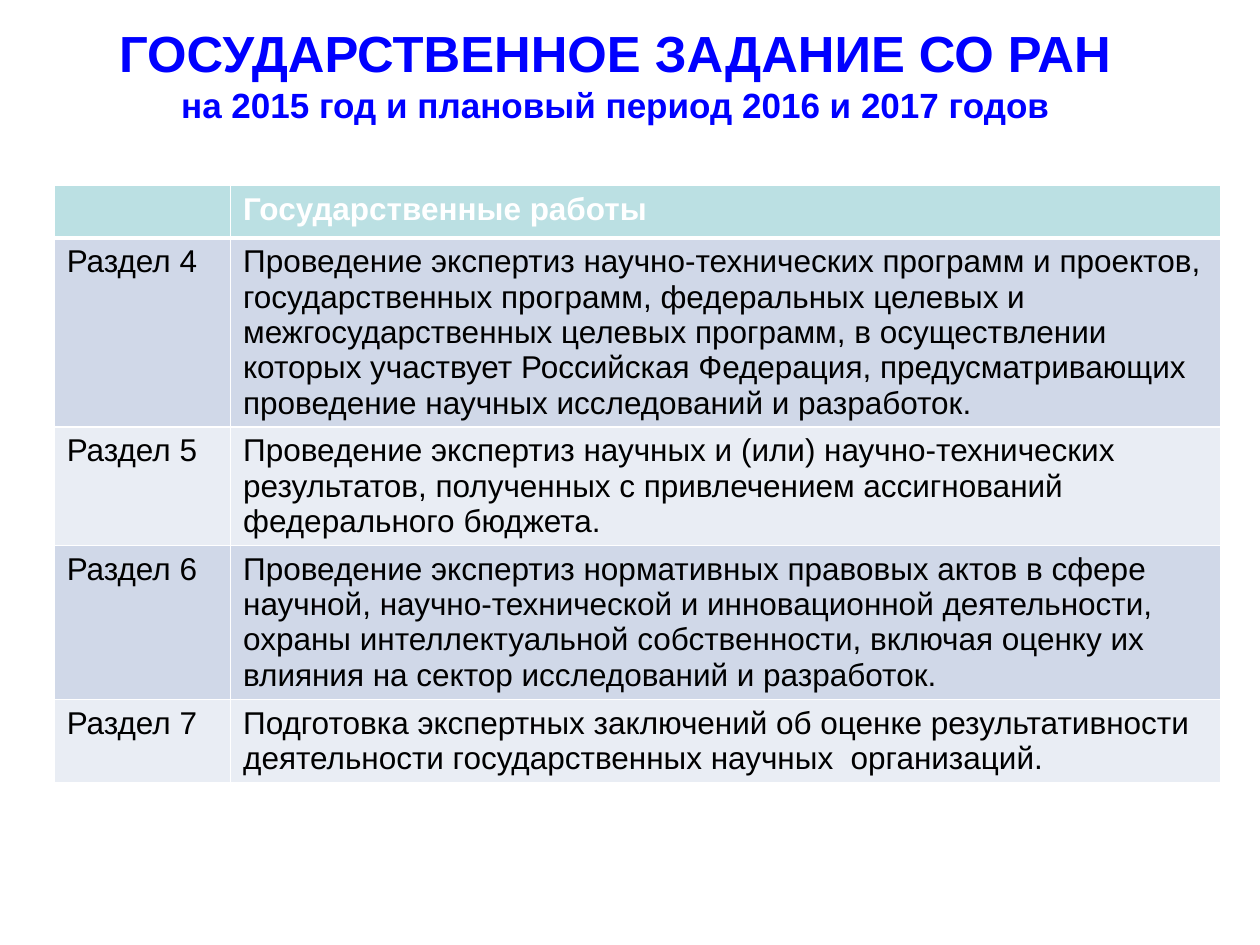
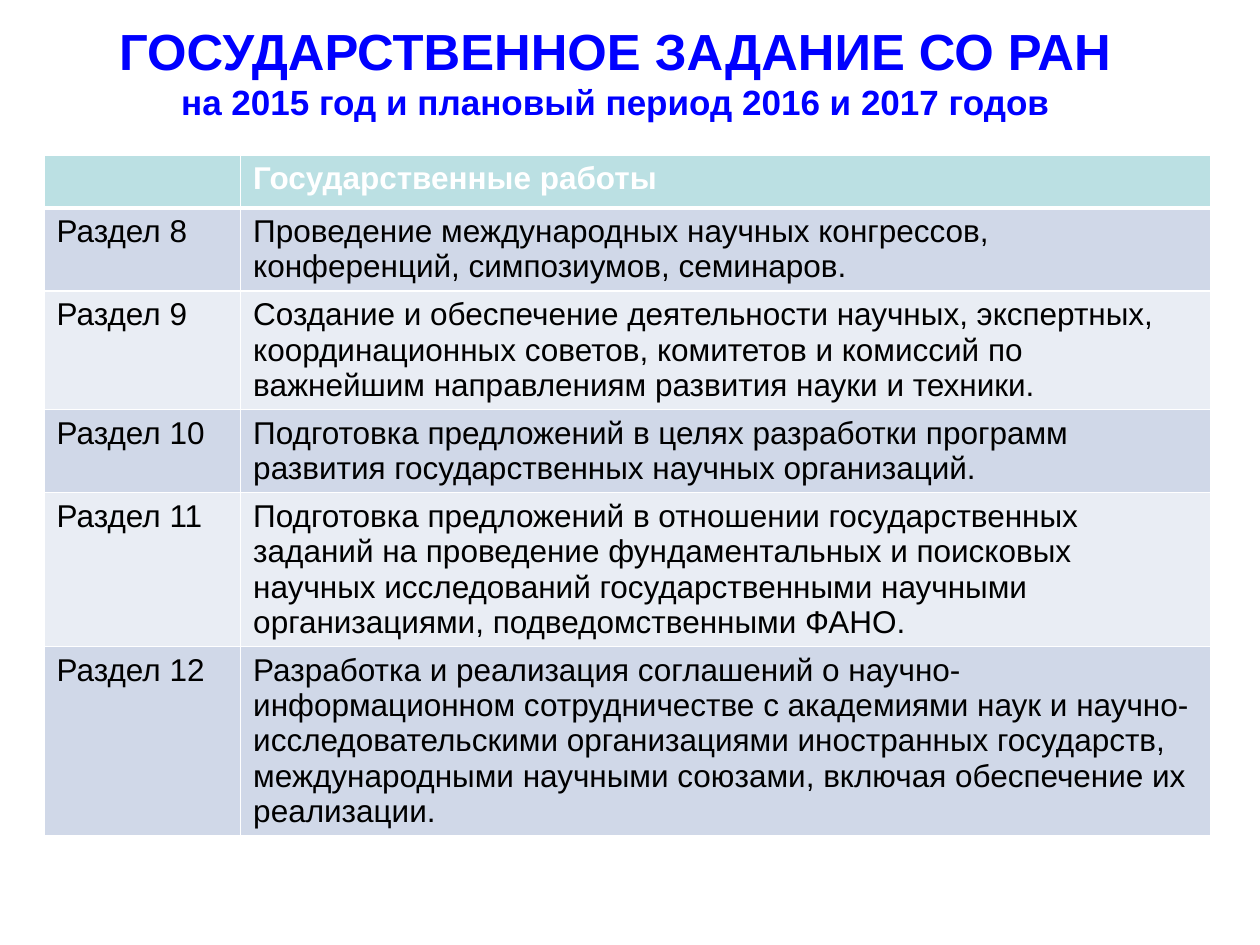
from lxml import etree
from pptx import Presentation
from pptx.dml.color import RGBColor
from pptx.enum.text import MSO_ANCHOR as Anchor, MSO_AUTO_SIZE as AutoSize, PP_ALIGN as Align
from pptx.oxml.ns import qn
from pptx.util import Inches, Pt

# Shared look
BLUE = RGBColor(0x00, 0x00, 0xFF)
WHITE = RGBColor(0xFF, 0xFF, 0xFF)
BLACK = RGBColor(0x00, 0x00, 0x00)
HEADER_FILL = RGBColor(0xBB, 0xE0, 0xE3)
BAND_FILLS = (RGBColor(0xD0, 0xD8, 0xE8), RGBColor(0xE9, 0xED, 0xF4))
FONT = "Arial"
HEADER_STYLE = {"name": FONT, "size": Pt(18), "bold": True}
BODY_STYLE = {"name": FONT, "size": Pt(18), "bold": False}
THIN, THICK = Pt(1), Pt(3)

# Slide size and shared measures
WIDTH, HEIGHT = Inches(10), Inches(7.5)
ROW_HEIGHT = Inches(0.42)
TABLE_WIDTH = Inches(9.26)
TITLE_LEFT, TITLE_WIDTH, TITLE_HEIGHT = Inches(0.12), Inches(9.53), Inches(0.87)

TITLE_LINES = (
    ("ГОСУДАРСТВЕННОЕ ЗАДАНИЕ СО РАН", 29),
    ("на 2015 год и плановый период 2016 и 2017 годов", 20),
)
TABLE_HEADER = "Государственные работы"

# What differs between the slides; lengths in inches
PAGES = (
    {
        "title_top": 0.15, "table_box": (0.43, 1.47, 5.02), "label_width": 1.4,
        "first_section": 4,
        "works": (
            "Проведение экспертиз научно-технических программ и проектов, государственных "
            "программ, федеральных целевых и межгосударственных целевых программ, в "
            "осуществлении которых участвует Российская Федерация, предусматривающих "
            "проведение научных исследований и разработок.",
            "Проведение экспертиз научных и (или) научно-технических результатов, полученных "
            "с привлечением ассигнований федерального бюджета.",
            "Проведение экспертиз нормативных правовых актов в сфере научной, "
            "научно-технической и инновационной деятельности, охраны интеллектуальной "
            "собственности, включая оценку их влияния на сектор исследований и разработок.",
            "Подготовка экспертных заключений об оценке результативности деятельности "
            "государственных научных  организаций.",
        ),
    },
    {
        "title_top": 0.13, "table_box": (0.35, 1.23, 5.72), "label_width": 1.56,
        "first_section": 8,
        "works": (
            "Проведение международных научных конгрессов, конференций, симпозиумов, семинаров.",
            "Создание и обеспечение деятельности научных, экспертных, координационных "
            "советов, комитетов и комиссий по важнейшим направлениям развития науки и техники.",
            "Подготовка предложений в целях разработки программ развития государственных "
            "научных организаций.",
            "Подготовка предложений в отношении государственных заданий на проведение "
            "фундаментальных и поисковых научных исследований государственными научными "
            "организациями, подведомственными ФАНО.",
            "Разработка и реализация соглашений о научно-информационном сотрудничестве с "
            "академиями наук и научно-исследовательскими организациями иностранных "
            "государств, международными научными союзами, включая обеспечение их реализации.",
        ),
    },
)


def apply_format(target, values):
    for name, value in values.items():
        setattr(target, name, value)


def style_font(font, style, color):
    apply_format(font, style)
    font.color.rgb = color


def set_borders(cell, widths):
    """Draw white cell edges; they must stand before the fill."""
    properties = cell._tc.get_or_add_tcPr()
    for index, (side, width) in enumerate(widths.items()):
        line = etree.Element(qn(f"a:ln{side}"), w=str(width))
        fill = etree.SubElement(line, qn("a:solidFill"))
        etree.SubElement(fill, qn("a:srgbClr"), val=str(WHITE))
        properties.insert(index, line)


def place_title(page, top):
    title = page.shapes.title
    apply_format(title, {"left": TITLE_LEFT, "top": top,
                         "width": TITLE_WIDTH, "height": TITLE_HEIGHT})
    frame = title.text_frame
    apply_format(frame, {"word_wrap": True, "auto_size": AutoSize.NONE,
                         "vertical_anchor": Anchor.MIDDLE})
    para = frame.paragraphs[0]
    para.alignment = Align.CENTER
    for index, (text, size) in enumerate(TITLE_LINES):
        if index:
            para.add_line_break()
        span = para.add_run()
        span.text = text
        style_font(span.font, {"name": FONT, "size": Pt(size), "bold": True}, BLUE)


def fill_cell(cell, text, row):
    is_header = row == 0
    cell.fill.solid()
    cell.fill.fore_color.rgb = HEADER_FILL if is_header else BAND_FILLS[(row - 1) % 2]
    set_borders(cell, {"L": THIN, "R": THIN,
                       "T": THICK if row == 1 else THIN,
                       "B": THICK if is_header else THIN})
    if text:
        span = cell.text_frame.paragraphs[0].add_run()
        span.text = text
        style_font(span.font, HEADER_STYLE if is_header else BODY_STYLE,
                   WHITE if is_header else BLACK)


def place_table(page, box, label_width, first_section, works):
    left, top, height = box
    rows = [("", TABLE_HEADER)]
    rows += [(f"Раздел {number}", work) for number, work in enumerate(works, first_section)]
    holder = page.shapes.add_table(len(rows), 2, left, top, TABLE_WIDTH, height)
    table = holder.table
    for column, width in zip(table.columns, (label_width, TABLE_WIDTH - label_width)):
        column.width = width
    # Rows start at one line and grow with their text
    for row, texts in enumerate(rows):
        table.rows[row].height = ROW_HEIGHT
        for column, text in enumerate(texts):
            fill_cell(table.cell(row, column), text, row)
    holder.height = height


def build_page(deck, content):
    page = deck.slides.add_slide(deck.slide_layouts.get_by_name("Title Only"))
    box = [Inches(length) for length in content["table_box"]]
    place_table(page, box, Inches(content["label_width"]),
                content["first_section"], content["works"])
    place_title(page, Inches(content["title_top"]))


def main():
    deck = Presentation()
    apply_format(deck, {"slide_width": WIDTH, "slide_height": HEIGHT})
    for content in PAGES:
        build_page(deck, content)
    deck.save("out.pptx")


if __name__ == "__main__":
    main()
